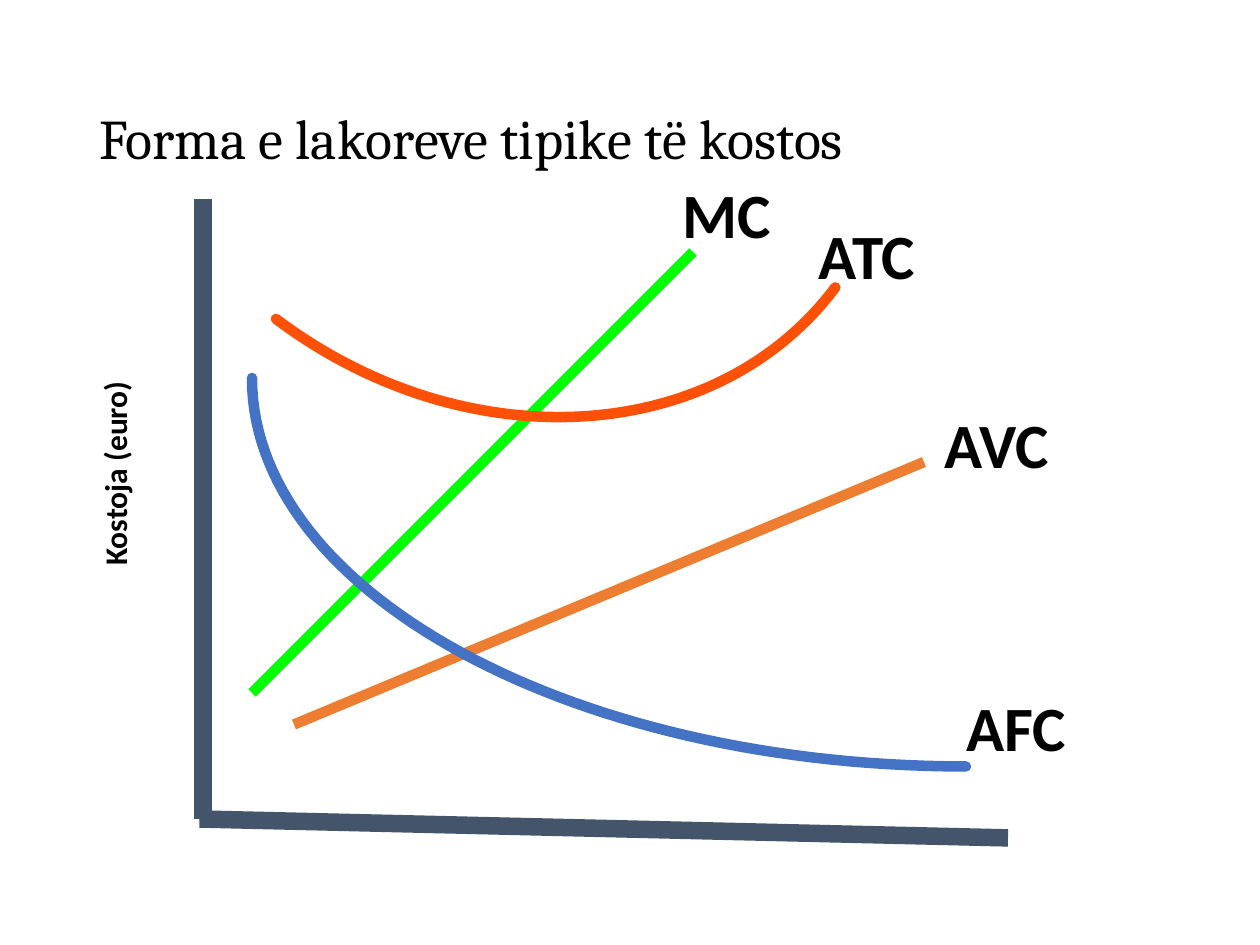
from dataclasses import dataclass

from lxml import etree
from pptx import Presentation
from pptx.dml.color import RGBColor
from pptx.enum import shapes, text
from pptx.oxml import ns
from pptx.util import Pt


@dataclass(frozen=True)
class Theme:
    ink: str = "000000"
    axis: str = "44546A"
    marginal: str = "00FF00"
    variable: str = "ED7D31"
    total: str = "FF5008"
    fixed: str = "4472C4"
    heading_font: str = "Cambria"
    label_font: str = "Calibri"
    heading_size: float = 32
    curve_label_size: float = 36
    axis_label_size: float = 18
    axis_width: float = 10
    curve_width: float = 6


THEME = Theme()


def write(frame, words, *, font, size, bold=False, spacing=None):
    paragraph = frame.paragraphs[0]
    paragraph.alignment = text.PP_ALIGN.LEFT
    paragraph.line_spacing = spacing
    run = paragraph.add_run()
    run.text = words
    run.font.name = font
    run.font.size = Pt(size)
    run.font.bold = bold
    run.font.color.rgb = RGBColor.from_string(THEME.ink)


def add_label(slide, words, box, size, rotation=0):
    label = slide.shapes.add_textbox(*map(Pt, box))
    label.rotation = rotation
    label.text_frame.word_wrap = False
    label.text_frame.auto_size = text.MSO_AUTO_SIZE.SHAPE_TO_FIT_TEXT
    write(label.text_frame, words, font=THEME.label_font, size=size, bold=True)


def paint(line, color, width):
    line.color.rgb = RGBColor.from_string(color)
    line.width = Pt(width)


def add_line(slide, start, end, color, width):
    line = slide.shapes.add_connector(
        shapes.MSO_CONNECTOR.STRAIGHT, *map(Pt, start + end))
    paint(line.line, color, width)
    etree.SubElement(line._element.spPr, ns.qn("a:effectLst"))


def bezier(controls, steps=60):
    for step in range(steps + 1):
        t = step / steps
        weights = ((1 - t) ** 3, 3 * t * (1 - t) ** 2, 3 * t ** 2 * (1 - t), t ** 3)
        yield tuple(Pt(sum(w * c[axis] for w, c in zip(weights, controls)))
                    for axis in (0, 1))


def add_curve(slide, controls, color):
    first, *rest = bezier(controls)
    builder = slide.shapes.build_freeform(*first)
    builder.add_line_segments(rest, close=False)
    curve = builder.convert_to_shape()
    curve.shadow.inherit = False
    curve.fill.background()
    paint(curve.line, color, THEME.curve_width)
    curve.line._get_or_add_ln().set("cap", "rnd")


def place_heading(slide, left, top, width, height):
    heading = slide.shapes.title
    heading.left, heading.top = Pt(left), Pt(top)
    heading.width, heading.height = Pt(width), Pt(height)
    heading.text_frame.vertical_anchor = text.MSO_ANCHOR.MIDDLE
    write(heading.text_frame, "Forma e lakoreve tipike të kostos",
          font=THEME.heading_font, size=THEME.heading_size, spacing=0.9)


def place_cost_graph(slide, left, top):
    def at(x, y):
        return left + x, top + y

    add_line(slide, at(2, 18), at(2, 372), THEME.axis, THEME.axis_width)
    add_line(slide, at(0, 372), at(462, 382.8), THEME.axis, THEME.axis_width)
    add_label(slide, "Kostoja (euro)", at(-126.2, 135) + (162.7, 36),
              THEME.axis_label_size, rotation=270)

    add_line(slide, at(30, 300), at(282, 48), THEME.marginal, THEME.curve_width)
    add_line(slide, at(54, 318), at(414, 168), THEME.variable, THEME.curve_width)

    total_cost = (363.4, 68.2), (295, 159.6), (151.7, 167.5), (43.7, 86.2)
    fixed_cost = (438, 342), (213, 342), (30, 242.4), (30, 120)
    for controls, color in ((total_cost, THEME.total), (fixed_cost, THEME.fixed)):
        add_curve(slide, [at(*point) for point in controls], color)

    for words, x, y, width in (("MC", 269, 0.5, 70.6), ("ATC", 346.8, 24.2, 88.6),
                               ("AVC", 418.8, 132.2, 90), ("AFC", 431, 294.2, 88.6)):
        add_label(slide, words, at(x, y) + (width, 50.4), THEME.curve_label_size)


def main():
    deck = Presentation()
    deck.slide_width, deck.slide_height = Pt(720), Pt(540)
    slide = deck.slides.add_slide(deck.slide_layouts.get_by_name("Title Only"))
    place_heading(slide, 49.5, 28.75, 621, 104.4)
    place_cost_graph(slide, 114, 96)
    deck.save("out.pptx")


if __name__ == "__main__":
    main()
